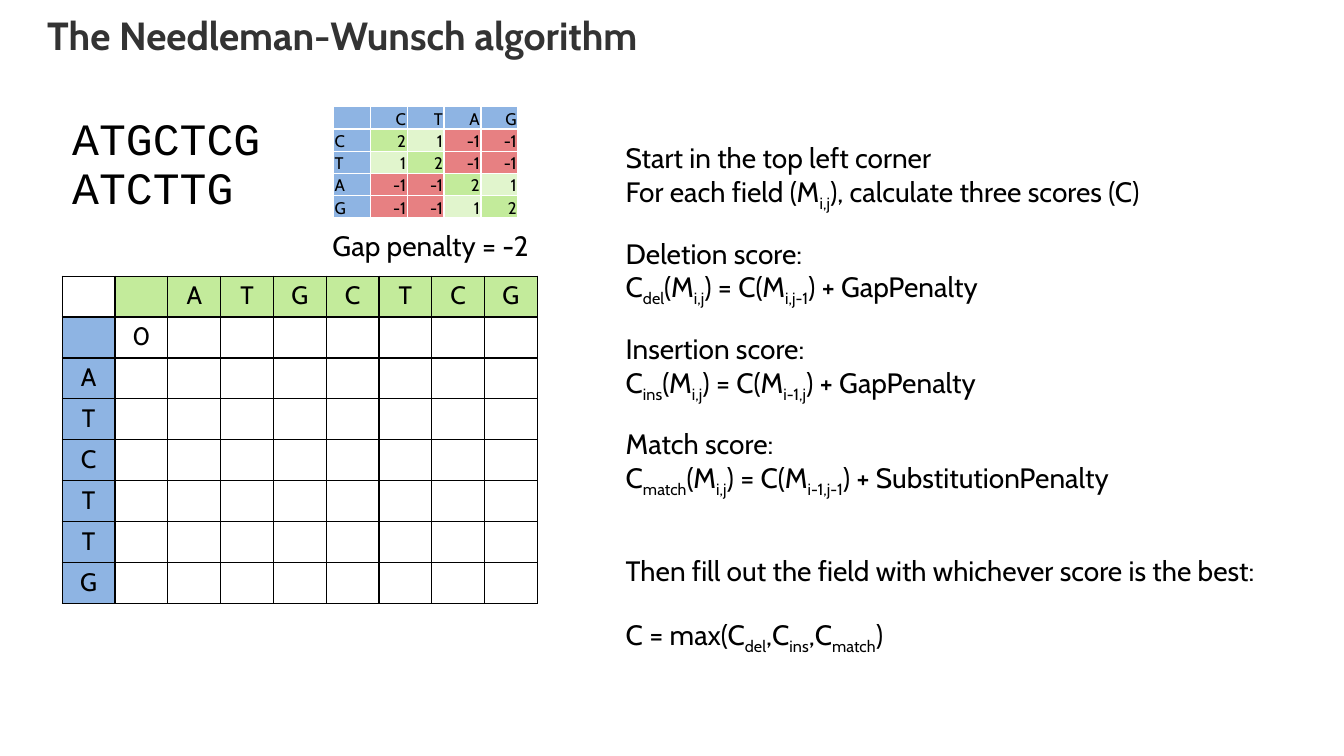
from lxml import etree
from pptx import Presentation
from pptx.dml.color import RGBColor
from pptx.enum.text import MSO_ANCHOR, PP_ALIGN
from pptx.oxml.ns import qn
from pptx.util import Cm, Pt

LEFT, MID, RIGHT = PP_ALIGN.LEFT, PP_ALIGN.CENTER, PP_ALIGN.RIGHT
CENTRE, BASE = MSO_ANCHOR.MIDDLE, MSO_ANCHOR.BOTTOM

BLACK = RGBColor(0x00, 0x00, 0x00)
WHITE = RGBColor(0xFF, 0xFF, 0xFF)
GREY = RGBColor(0x33, 0x33, 0x33)
BLUE = RGBColor(0x8E, 0xB4, 0xE3)
GREEN = RGBColor(0xC3, 0xEB, 0x9B)
PALE = RGBColor(0xE1, 0xF5, 0xCD)
RED = RGBColor(0xE7, 0x80, 0x82)

FONT = "Cabin"
TOP, SIDE = "ATGCTCG", "ATCTTG"
BASES = "CTAG"
PAIRS = ("CT", "AG")
TINTS = {2: GREEN, 1: PALE, -1: RED}

# Space before in points, then text with subscripts between underscores
STEPS = [
    (0, "Start in the top left corner"),
    (0, "For each field (M_i,j_), calculate three scores (C)"),
    (22, "Deletion score:"),
    (0, "C_del_(M_i,j_) = C(M_i,j-1_) + GapPenalty"),
    (22, "Insertion score:"),
    (0, "C_ins_(M_i,j_) = C(M_i-1,j_) + GapPenalty"),
    (22, "Match score:"),
    (0, "C_match_(M_i,j_) = C(M_i-1,j-1_) + SubstitutionPenalty"),
    (44, "Then fill out the field with whichever score is the best:"),
    (22, "C = max(C_del_,C_ins_,C_match_)"),
]


def set_all(item, **attrs):
    for name, value in attrs.items():
        setattr(item, name, value)


def write(para, text, size, font=FONT, color=BLACK, bold=False):
    para.line_spacing = 0.9
    for i, part in enumerate(text.split("_")):
        if not part:
            continue
        run = para.add_run()
        run.text = part
        set_all(run.font, name=font, size=Pt(size), bold=bold)
        run.font.color.rgb = color
        if i % 2:
            run._r.get_or_add_rPr().set("baseline", "-25000")


def add_text(slide, place, lines, size, inset=(0.25, 0.13), **style):
    frame = slide.shapes.add_textbox(*map(Cm, place)).text_frame
    x, y = map(Cm, inset)
    set_all(frame, word_wrap=True, margin_left=x, margin_right=x,
            margin_top=y, margin_bottom=y)
    for i, (gap, text) in enumerate(lines):
        para = frame.add_paragraph() if i else frame.paragraphs[0]
        para.space_before = Pt(gap)
        write(para, text, size, **style)


def add_edges(cell, color):
    props = cell._tc.get_or_add_tcPr()
    for side in "LRTB":
        line = etree.SubElement(props, qn(f"a:ln{side}"), w=str(Pt(1)))
        fill = etree.SubElement(line, qn("a:solidFill"))
        etree.SubElement(fill, qn("a:srgbClr"), val=str(color))


def fill_cell(cell, text, tint, size, edge, align, **layout):
    set_all(cell, **layout)
    add_edges(cell, edge)
    cell.fill.solid()
    cell.fill.fore_color.rgb = tint
    para = cell.text_frame.paragraphs[0]
    para.alignment = align
    write(para, text, size)
    if not text:
        etree.SubElement(para._p, qn("a:endParaRPr"), sz=str(size * 100))


def add_grid(slide, left, top, wide, high, rows, **style):
    """Each entry of rows is a list of (text, tint, align)."""
    count, cols = len(rows), len(rows[0])
    table = slide.shapes.add_table(count, cols, Cm(left), Cm(top),
                                   Cm(wide * cols), Cm(high * count)).table
    set_all(table, first_row=False, horz_banding=False)
    for col in table.columns:
        col.width = Cm(wide)
    for r, row in enumerate(rows):
        table.rows[r].height = Cm(high)
        for c, (text, tint, align) in enumerate(row):
            fill_cell(table.cell(r, c), text, tint, align=align, **style)


def score(a, b):
    if a == b:
        return 2
    return 1 if any(a in pair and b in pair for pair in PAIRS) else -1


def score_rows():
    rows = [[("", BLUE, LEFT)] + [(b, BLUE, RIGHT) for b in BASES]]
    for a in BASES:
        marks = [score(a, b) for b in BASES]
        rows.append([(a, BLUE, LEFT)]
                    + [(str(m), TINTS[m], RIGHT) for m in marks])
    return rows


def matrix_rows():
    rows = [[("", WHITE, MID)] + [(b, GREEN, MID) for b in ["", *TOP]]]
    for a in ["", *SIDE]:
        start = "" if a else "0"
        rows.append([(a, BLUE, MID), (start, WHITE, MID)]
                    + [("", WHITE, MID) for _ in TOP])
    return rows


def main():
    deck = Presentation()
    set_all(deck, slide_width=Cm(33.87), slide_height=Cm(19.05))
    slide = deck.slides.add_slide(deck.slide_layouts[6])

    # Title
    add_text(slide, (1.19, 0.41, 28.65, 2.29),
             [(0, "The Needleman-Wunsch algorithm")], 28,
             inset=(0, 0), color=GREY, bold=True)

    # Alignment matrix
    add_grid(slide, 1.57, 6.96, 1.33, 1.03, matrix_rows(), size=18,
             edge=BLACK, vertical_anchor=CENTRE)

    # Sequences
    add_text(slide, (1.57, 2.82, 5.6, 2.74), [(0, TOP), (0, SIDE)], 32,
             font="Courier New")

    # Substitution scores and gap penalty
    add_grid(slide, 8.4, 2.69, 0.93, 0.56, score_rows(), size=12,
             edge=WHITE, vertical_anchor=BASE, margin_left=Cm(0.03),
             margin_right=Cm(0.03), margin_top=Cm(0.03), margin_bottom=0)
    add_text(slide, (8.13, 5.72, 5.87, 1.02), [(0, "Gap penalty = -2")], 20)

    # Steps of the algorithm
    add_text(slide, (15.52, 3.51, 17.63, 12.57), STEPS, 20)

    deck.save("out.pptx")


if __name__ == "__main__":
    main()
